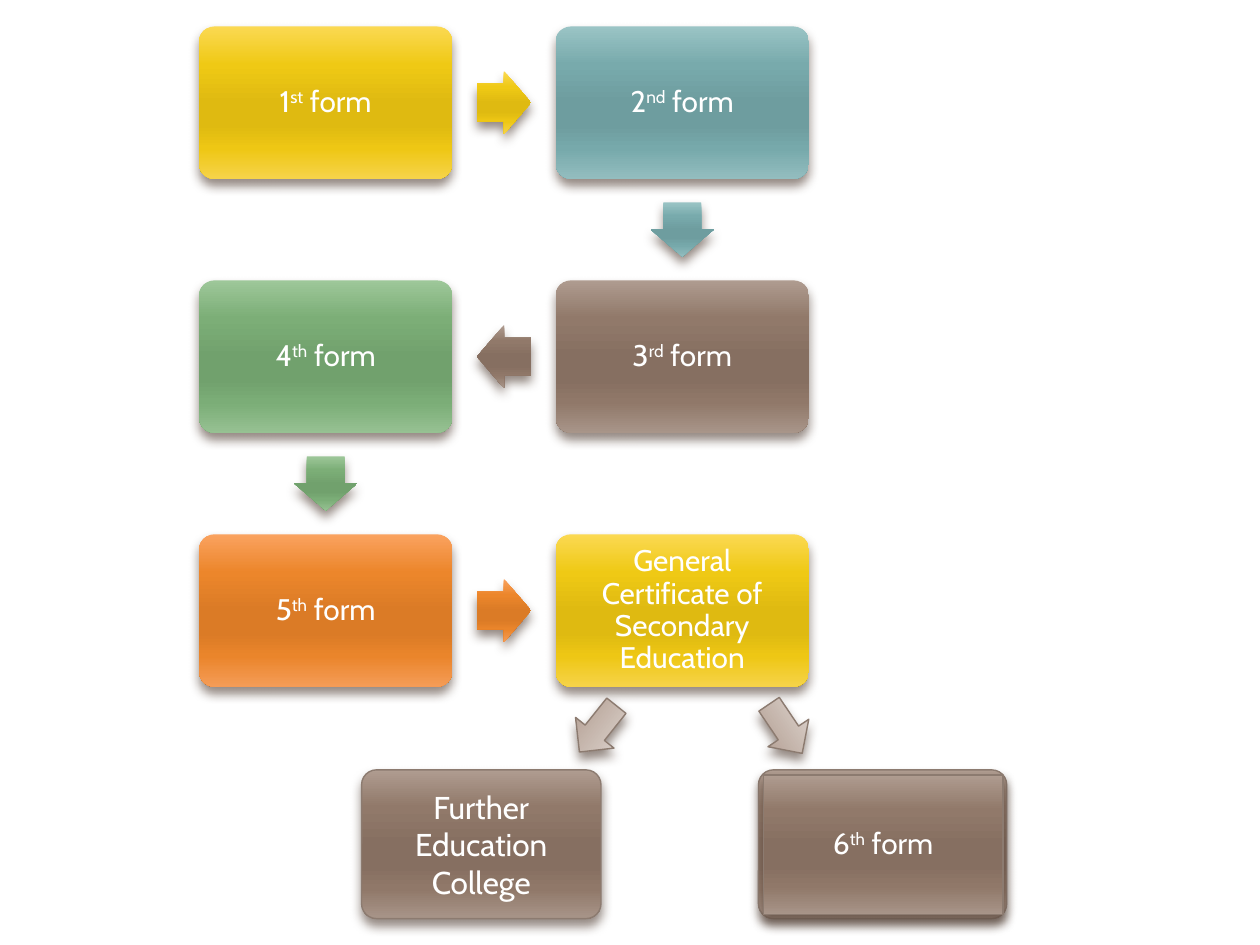
"""Build a flow chart of school forms on one slide."""
from dataclasses import dataclass
from typing import NamedTuple

from lxml.etree import SubElement
from pptx import Presentation
from pptx.dml.color import RGBColor
from pptx.enum.shapes import MSO_SHAPE
from pptx.enum.text import MSO_ANCHOR, PP_ALIGN
from pptx.oxml.ns import qn
from pptx.util import Inches, Pt


@dataclass(frozen=True)
class Theme:
    font: str = "Cabin"
    ink: str = "FFFFFF"
    edge: str = "8C7B70"
    shade: str = "4E3B30"
    small: float = 17
    large: float = 18
    gold: tuple = ("FBD952", "EFC915", "DFBA11", "DFBA11", "EEC714", "F6D349")
    teal: tuple = ("9AC4C5", "78AAAC", "6E9D9F", "6E9D9F", "77A9AB", "93BDBF")
    brown: tuple = ("AF9C90", "91796A", "866F61", "866F61", "907869", "A89589")
    green: tuple = ("9DC799", "7CAE77", "71A16D", "71A16D", "7BAD77", "96C192")
    rust: tuple = ("FAA25F", "EC862B", "DB7B26", "DB7B26", "EA852B", "F59C57")
    pale: tuple = ("E7E1DD", "BAA79C", "AE9788")


class Area(NamedTuple):
    """A box in percent of the slide's width and height."""
    x: float
    y: float
    w: float
    h: float


class Step(NamedTuple):
    text: str
    col: int
    row: int
    tones: tuple


THEME = Theme()
WIDE, HIGH = Inches(10), Inches(7.5)
FIRST = Area(15.8, 2.8, 20.1, 16.13)
PITCH = (28.3, 26.87)
ARROW = (4.3, 6.67)
STOPS = {6: (0, 25, 50, 65, 80, 100), 3: (0, 72, 100)}
TURNS = {(1, 0): 0, (0, 1): 90, (-1, 0): 180}

STEPS = [
    Step("1^st^ form", 0, 0, THEME.gold),
    Step("2^nd^ form", 1, 0, THEME.teal),
    Step("3^rd^ form", 1, 1, THEME.brown),
    Step("4^th^ form", 0, 1, THEME.green),
    Step("5^th^ form", 0, 2, THEME.rust),
    Step("General Certificate of Secondary Education", 1, 2, THEME.gold),
]


def blend(shape, tones: tuple, spin: bool) -> None:
    """Fill a shape from top to bottom; spin turns the fill with it."""
    shape.fill.gradient()
    grad = shape._element.spPr.find(qn("a:gradFill"))
    grad.set("rotWithShape", str(int(spin)))
    grad.find(qn("a:lin")).set("ang", "5400000")
    stops = grad.find(qn("a:gsLst"))
    stops.clear()
    for place, tone in zip(STOPS[len(tones)], tones):
        stop = SubElement(stops, qn("a:gs"), pos=str(place * 1000))
        SubElement(stop, qn("a:srgbClr"), val=tone)


def shadow(shape) -> None:
    """Drop a soft shadow below a shape."""
    shape.shadow.inherit = False
    effects = shape._element.spPr.find(qn("a:effectLst"))
    drop = SubElement(effects, qn("a:outerShdw"), blurRad=str(Pt(6)),
                      dist=str(Pt(4)), dir="5400000", rotWithShape="0")
    tint = SubElement(drop, qn("a:srgbClr"), val=THEME.shade)
    SubElement(tint, qn("a:alpha"), val="60000")


def draw(slide, kind, area: Area, tones: tuple, *, adjust: tuple = (),
         turn: float = 0, edge: bool = False, spin: bool = False):
    """Add one shaded shape."""
    shape = slide.shapes.add_shape(
        kind, int(WIDE * area.x / 100), int(HIGH * area.y / 100),
        int(WIDE * area.w / 100), int(HIGH * area.h / 100))
    for index, value in enumerate(adjust):
        shape.adjustments[index] = value
    shape.rotation = turn
    blend(shape, tones, spin)
    if edge:
        shape.line.color.rgb = RGBColor.from_string(THEME.edge)
        shape.line.width = Pt(0.79)
    else:
        shape.line.fill.background()
    shadow(shape)
    return shape


def write(shape, text: str, *, size: float = THEME.small, inset: float = 0.11,
          lead: float = 0.9, after: float = 6) -> None:
    """Write centred text, raising the parts between carets."""
    frame = shape.text_frame
    frame.word_wrap = True
    frame.vertical_anchor = MSO_ANCHOR.MIDDLE
    frame.margin_left = frame.margin_right = Inches(inset)
    frame.margin_top = frame.margin_bottom = Inches(inset)
    line = frame.paragraphs[0]
    line.alignment = PP_ALIGN.CENTER
    line.line_spacing = lead
    line.space_after = Pt(after)
    for index, part in enumerate(text.split("^")):
        run = line.add_run()
        run.text = part
        run.font.name = THEME.font
        run.font.size = Pt(size)
        run.font.color.rgb = RGBColor.from_string(THEME.ink)
        if index % 2:
            run._r.get_or_add_rPr().set("baseline", "30000")


def cell(step: Step) -> Area:
    """Find the box of a step on the grid."""
    return Area(FIRST.x + step.col * PITCH[0], FIRST.y + step.row * PITCH[1],
                FIRST.w, FIRST.h)


def link(slide, start: Step, end: Step) -> None:
    """Put an arrow midway between two steps."""
    one, two = cell(start), cell(end)
    wide, high = ARROW
    area = Area((one.x + two.x + FIRST.w - wide) / 2,
                (one.y + two.y + FIRST.h - high) / 2, wide, high)
    turn = TURNS[end.col - start.col, end.row - start.row]
    draw(slide, MSO_SHAPE.RIGHT_ARROW, area, start.tones,
         adjust=(0.6, 0.5), turn=turn)


def main() -> None:
    """Draw the steps, their links and the two ways on."""
    deck = Presentation()
    deck.slide_width, deck.slide_height = WIDE, HIGH
    slide = deck.slides.add_slide(deck.slide_layouts[6])
    rounded = MSO_SHAPE.ROUNDED_RECTANGLE

    for step, after in zip(STEPS, STEPS[1:] + [None]):
        box = draw(slide, rounded, cell(step), step.tones, adjust=(0.1,))
        write(box, step.text)
        if after:
            link(slide, step, after)

    college = draw(slide, rounded, Area(28.7, 81.47, 19, 15.73), THEME.brown,
                   adjust=(0.1,), edge=True)
    write(college, "Further Education College", size=THEME.large,
          inset=0.1, lead=1, after=0)
    draw(slide, rounded, Area(60.2, 81.47, 19.7, 15.73), THEME.brown,
         adjust=(0.1,), edge=True)
    sixth = draw(slide, MSO_SHAPE.RECTANGLE, Area(60.6, 82, 19, 14.8),
                 THEME.brown, edge=True)
    write(sixth, "6^th^ form", inset=0.07)

    for left, turn in ((45.1, 128.6), (60, 56)):
        draw(slide, MSO_SHAPE.RIGHT_ARROW, Area(left, 74.53, 4.7, 5.2),
             THEME.pale, turn=turn, edge=True, spin=True)
    deck.save("out.pptx")


if __name__ == "__main__":
    main()
